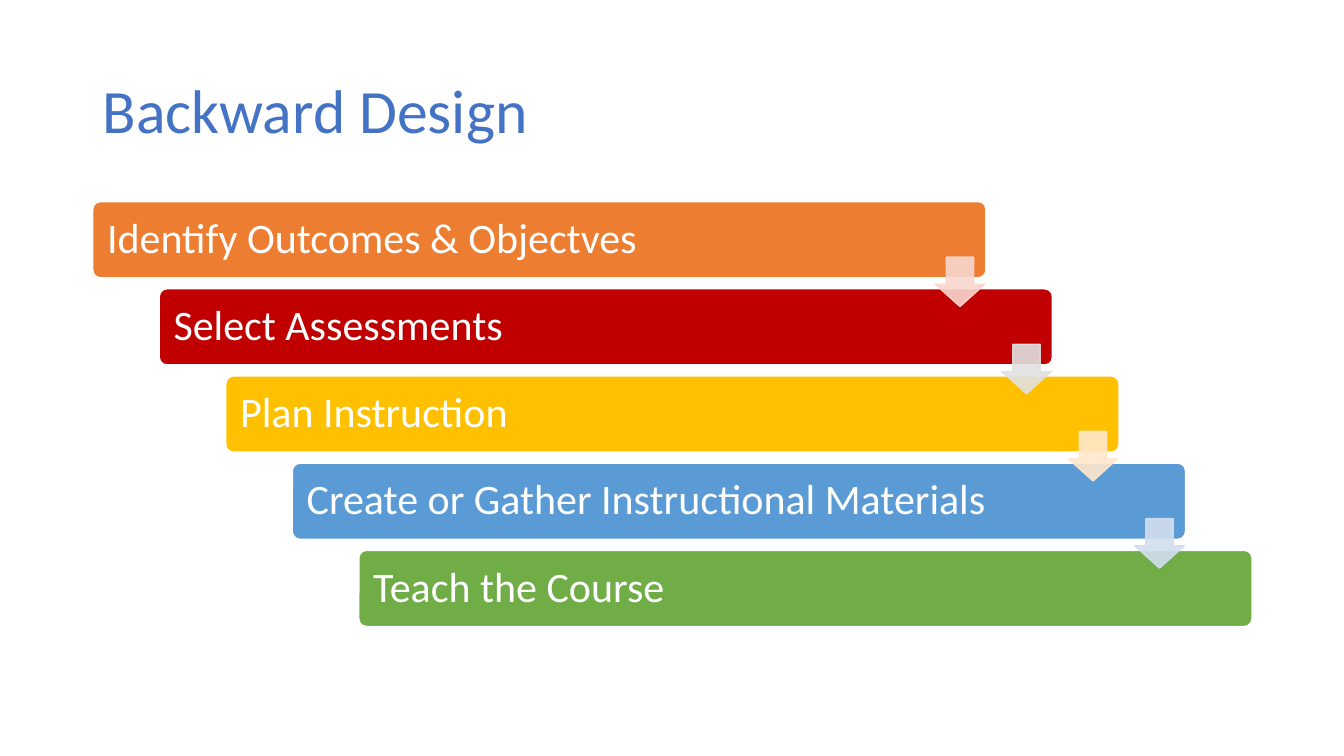
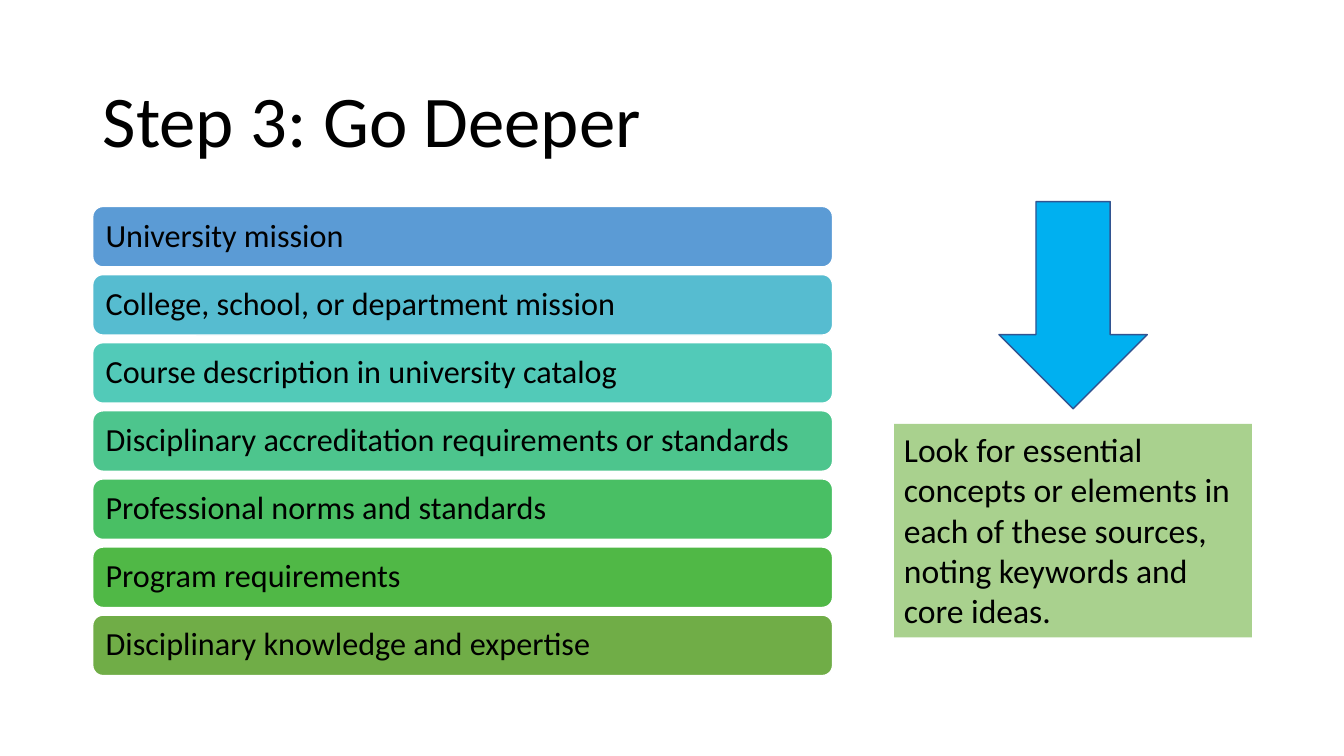
"""Build two slides on backward design and course sources."""
from lxml.etree import SubElement
from pptx import Presentation
from pptx.dml.color import RGBColor
from pptx.enum.shapes import MSO_SHAPE as Kind
from pptx.enum.text import MSO_ANCHOR as Anchor, PP_ALIGN as Align
from pptx.oxml.ns import qn
from pptx.util import Pt

FONT = "Calibri"
WHITE, BLACK, BLUE = "FFFFFF", "000000", "4472C4"
LEFT, WIDE = 66.24, 828

STEPS = [
    ("Identify Outcomes & Objectves", "ED7D31"),
    ("Select Assessments", "C00000"),
    ("Plan Instruction", "FFC000"),
    ("Create or Gather Instructional Materials", "5B9BD5"),
    ("Teach the Course", "70AD47"),
]
ARROWS = ["F8D7CE", "E1E1E1", "FFE8CC", "D2DEEF"]

SOURCES = [
    ("University mission", "5B9BD5"),
    ("College, school, or department mission", "56BCD0"),
    ("Course description in university catalog", "52CAB8"),
    ("Disciplinary accreditation requirements or standards", "4DC58D"),
    ("Professional norms and standards", "49BF64"),
    ("Program requirements", "50B846"),
    ("Disciplinary knowledge and expertise", "70AD47"),
]
NOTE = ("Look for essential concepts or elements in each of these sources, "
        "noting keywords and core ideas.")


def paint(fill, color, alpha=100):
    """Make a fill solid, with an opacity in percent."""
    fill.solid()
    fill.fore_color.rgb = RGBColor.from_string(color)
    if alpha < 100:
        for node in fill._xPr.iter(qn("a:srgbClr")):
            SubElement(node, qn("a:alpha"), val=str(alpha * 1000))


def write(shape, text, size, color, pad=(7.2, 3.6), anchor=Anchor.MIDDLE, space=0.9):
    """Put one left-aligned paragraph into a shape."""
    frame = shape.text_frame
    frame.word_wrap = True
    frame.vertical_anchor = anchor
    frame.margin_left = frame.margin_right = Pt(pad[0])
    frame.margin_top = frame.margin_bottom = Pt(pad[1])
    para = frame.paragraphs[0]
    para.text = text
    para.alignment = Align.LEFT
    para.line_spacing = space
    para.font.name = FONT
    para.font.size = Pt(size)
    para.font.color.rgb = RGBColor.from_string(color)


def draw(slide, kind, box, color, line=None, alpha=100, adj=()):
    """Add a preset shape with a flat fill and an optional outline."""
    shape = slide.shapes.add_shape(kind, *map(Pt, box))
    shape.shadow.inherit = False
    for i, value in enumerate(adj):
        shape.adjustments[i] = value
    paint(shape.fill, color, alpha)
    if line:
        paint(shape.line.fill, line, alpha)
        shape.line.width = Pt(1)
    else:
        shape.line.fill.background()
    return shape


def start(deck, text, size, color, top, high):
    """Add a blank slide with its title."""
    slide = deck.slides.add_slide(deck.slide_layouts[6])
    box = slide.shapes.add_textbox(Pt(LEFT), Pt(top), Pt(WIDE), Pt(high))
    write(box, text, size, color)
    return slide


def bars(slide, items, box, step, size, color, pad, adj):
    """Draw rounded bars, each shifted by one step."""
    left, top, wide, high = box
    for i, (text, fill) in enumerate(items):
        spot = (left + i * step[0], top + i * step[1], wide, high)
        bar = draw(slide, Kind.ROUNDED_RECTANGLE, spot, fill, WHITE, adj=[adj])
        write(bar, text, size, color, (pad, pad))


def design(deck):
    """Build the staircase of design steps."""
    slide = start(deck, "Backward Design", 44, BLUE, 28.8, 104.4)
    step = (47.52, 62.28)
    bars(slide, STEPS, (LEFT, 144, 638, 54.4), step, 30, WHITE, 8.64, 0.1)
    for i, color in enumerate(ARROWS):
        spot = (668 + i * step[0], 183.6 + i * step[1], 35.4, 35.4)
        draw(slide, Kind.DOWN_ARROW, spot, color, color, 90, (0.55, 0.45))


def deeper(deck):
    """Build the list of sources with its note."""
    slide = start(deck, "Step 3: Go Deeper", 52, BLACK, 43.9, 89.3)
    bars(slide, SOURCES, (LEFT, 147.5, 528.5, 43.2), (0, 48.65), 23, BLACK, 7.2, 0.17)
    note = draw(slide, Kind.RECTANGLE, (638.6, 302.8, 255.6, 152.6), "A9D18E")
    write(note, NOTE, 24, BLACK, anchor=Anchor.TOP, space=1)
    draw(slide, Kind.DOWN_ARROW, (713.5, 144, 106, 148), "00B0F0", "325491")


def main():
    """Build and save the deck."""
    deck = Presentation()
    deck.slide_width, deck.slide_height = Pt(960), Pt(540)
    design(deck)
    deeper(deck)
    deck.save("out.pptx")


if __name__ == "__main__":
    main()
